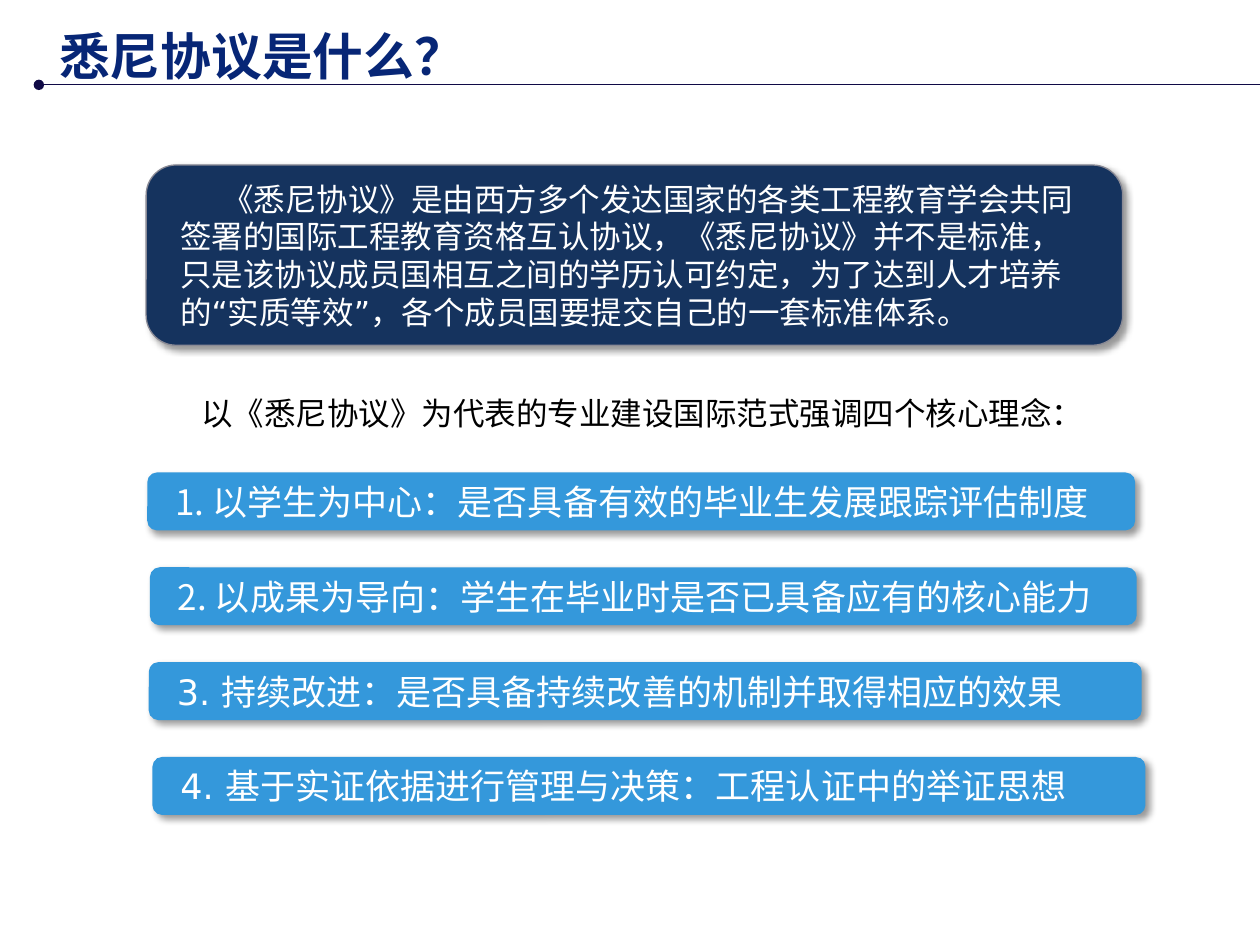
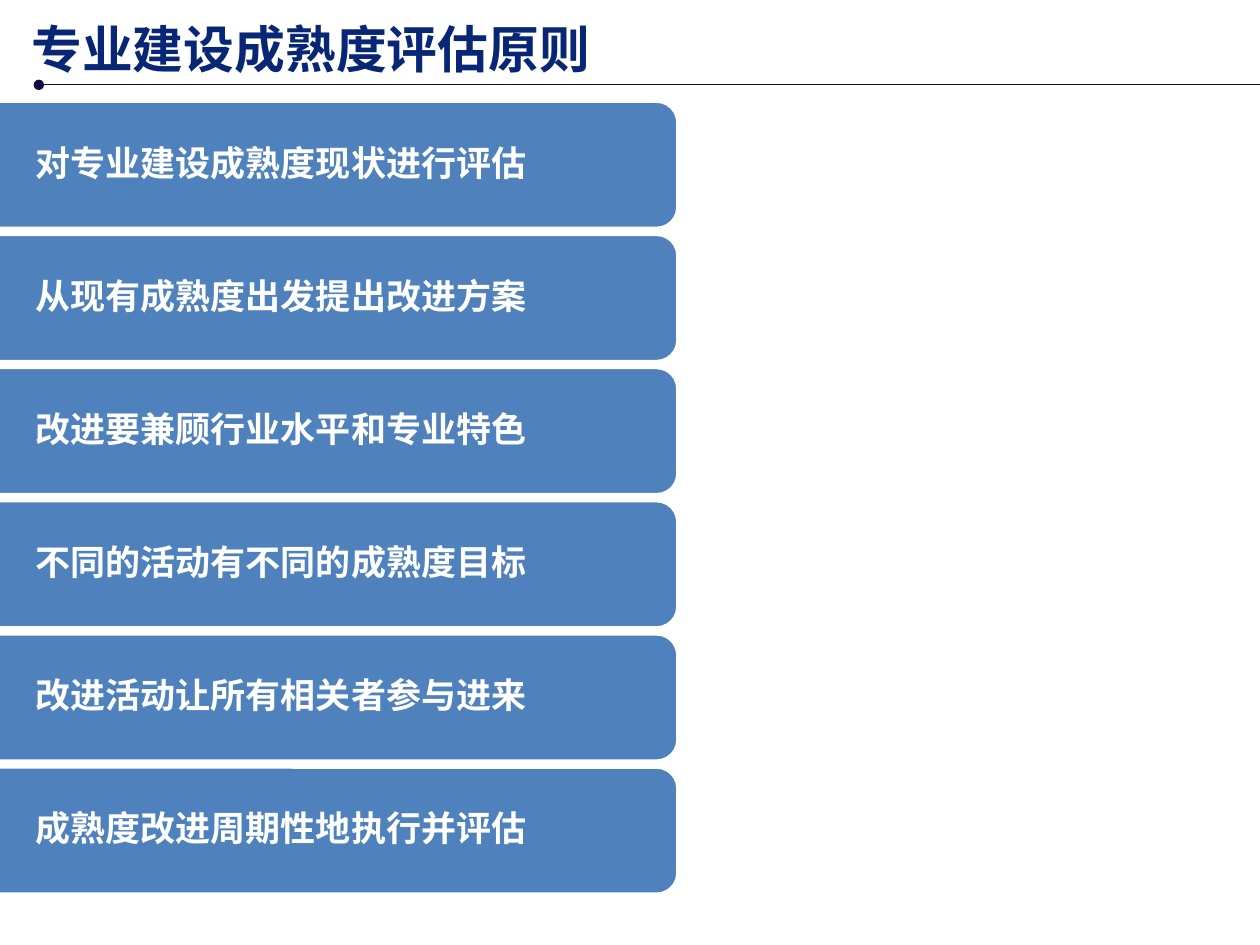
from dataclasses import dataclass

from lxml.etree import SubElement
from pptx import Presentation
from pptx.dml.color import RGBColor
from pptx.enum.shapes import MSO_CONNECTOR as Connector, MSO_SHAPE as Preset
from pptx.enum.text import MSO_ANCHOR as Anchor, PP_ALIGN as Align
from pptx.oxml.ns import qn
from pptx.util import Pt

# Content
AGREEMENT_TITLE = "悉尼协议是什么？"
DEFINITION = (
    "《悉尼协议》是由西方多个发达国家的各类工程教育学会共同签署的国际工程教育资格互认协议，"
    "《悉尼协议》并不是标准，只是该协议成员国相互之间的学历认可约定，为了达到人才培养的“实质等效”，"
    "各个成员国要提交自己的一套标准体系。"
)
IDEAS_LEAD = "以《悉尼协议》为代表的专业建设国际范式强调四个核心理念："
# Each idea: left, width, heading in the title font, rest in the body font
IDEAS = [
    (84.2, 564.5, "1. 以学生为中心：", "是否具备有效的毕业生发展跟踪评估制度"),
    (85.7, 563.8, "2. 以成果为导向：", "学生在毕业时是否已具备应有的核心能力"),
    (85, 567.4, "", "3. 持续改进：是否具备持续改善的机制并取得相应的效果"),
    (87.1, 567.4, "", "4. 基于实证依据进行管理与决策：工程认证中的举证思想"),
]
PRINCIPLES_TITLE = "专业建设成熟度评估原则"
PRINCIPLES = [
    "对专业建设成熟度现状进行评估",
    "从现有成熟度出发提出改进方案",
    "改进要兼顾行业水平和专业特色",
    "不同的活动有不同的成熟度目标",
    "改进活动让所有相关者参与进来",
    "成熟度改进周期性地执行并评估",
]


@dataclass(frozen=True)
class Theme:
    title: str = "072676"
    rule: str = "100A46"
    panel: str = "15335E"
    panel_edge: str = "8A8A95"
    idea: str = "3498DB"
    principle: str = "4F81BD"
    light: str = "FFFFFF"
    dark: str = "000000"
    title_font: str = "Noto Sans CJK SC"
    body_font: str = "DejaVu Sans"
    title_size: int = 29
    item_size: int = 20
    text_size: int = 18


THEME = Theme()


def rgb(code):
    return RGBColor.from_string(code)


def write(shape, runs, size, color, bold=False, insets=(0, 0), indent=0, **layout):
    """Fill a shape with one paragraph of (text, font) runs; layout sets paragraph attributes."""
    across, down = insets
    frame = shape.text_frame
    frame_format = {
        "word_wrap": True, "vertical_anchor": Anchor.MIDDLE,
        "margin_left": Pt(across), "margin_right": Pt(across),
        "margin_top": Pt(down), "margin_bottom": Pt(down),
    }
    for name, value in frame_format.items():
        setattr(frame, name, value)
    paragraph = frame.paragraphs[0]
    if indent:
        paragraph._p.get_or_add_pPr().set("indent", str(Pt(indent)))
    for name, value in {"alignment": Align.LEFT, **layout}.items():
        setattr(paragraph, name, value)
    for text, typeface in runs:
        run = paragraph.add_run()
        run.text = text
        for name, value in {"name": typeface, "size": Pt(size), "bold": bold}.items():
            setattr(run.font, name, value)
        run.font.color.rgb = rgb(color)
        SubElement(run._r.get_or_add_rPr(), qn("a:ea"), typeface=typeface)


def add_box(slide, left, top, width, height):
    return slide.shapes.add_textbox(Pt(left), Pt(top), Pt(width), Pt(height))


def add_card(slide, left, top, width, height, fill, edge=None, edge_width=0, raised=False):
    card = slide.shapes.add_shape(
        Preset.ROUNDED_RECTANGLE, Pt(left), Pt(top), Pt(width), Pt(height))
    card.fill.solid()
    card.fill.fore_color.rgb = rgb(fill)
    if edge:
        card.line.color.rgb = rgb(edge)
        card.line.width = Pt(edge_width)
    else:
        card.line.fill.background()
    card.shadow.inherit = False
    if raised:
        effects = card._element.spPr.find(qn("a:effectLst"))
        shadow = SubElement(effects, qn("a:outerShdw"), blurRad=str(Pt(4)), dist=str(Pt(3)),
                            dir="2700000", algn="tl", rotWithShape="0")
        tint = SubElement(shadow, qn("a:srgbClr"), val=THEME.dark)
        SubElement(tint, qn("a:alpha"), val="40000")
    return card


def add_titled_slide(deck, title, left, top, width):
    slide = deck.slides.add_slide(deck.slide_layouts[6])
    write(add_box(slide, left, top, width, 35.3), [(title, THEME.title_font)],
          THEME.title_size, THEME.title, bold=True)
    rule = slide.shapes.add_connector(Connector.STRAIGHT, Pt(22.2), Pt(48.5), Pt(726.5), Pt(48.5))
    rule.line.color.rgb = rgb(THEME.rule)
    rule.line.width = Pt(0.5)
    SubElement(rule.line._get_or_add_ln(), qn("a:headEnd"), type="oval")
    SubElement(rule._element.spPr, qn("a:effectLst"))
    return slide


def build_agreement(deck):
    slide = add_titled_slide(deck, AGREEMENT_TITLE, 33.8, 13.7, 484)
    card_insets = (14.4, 2.9)
    definition = add_card(slide, 83.5, 94.3, 558, 103, THEME.panel,
                          THEME.panel_edge, 0.75, raised=True)
    write(definition, [(DEFINITION, THEME.body_font)], THEME.text_size, THEME.light,
          insets=card_insets, indent=24, line_spacing=Pt(21.5))
    write(add_box(slide, 95.8, 221.8, 541.4, 28.8), [(IDEAS_LEAD, THEME.body_font)],
          THEME.text_size, THEME.dark, insets=(7.2, 3.6), indent=12)
    first_top, pitch = 270, 54.2
    for row, (left, width, heading, rest) in enumerate(IDEAS):
        idea = add_card(slide, left, first_top + row * pitch, width, 33.1,
                        THEME.idea, raised=True)
        runs = [(heading, THEME.title_font), (rest, THEME.body_font)]
        write(idea, [run for run in runs if run[0]], THEME.item_size, THEME.light,
              insets=card_insets)


def build_principles(deck):
    slide = add_titled_slide(deck, PRINCIPLES_TITLE, 18, 10.1, 559.4)
    first_top, pitch = 57.8, 76.1
    for row, principle in enumerate(PRINCIPLES):
        card = add_card(slide, -66.2, first_top + row * pitch, 453.6, 72.7,
                        THEME.principle, THEME.light, 2)
        write(card, [(principle, THEME.body_font)], THEME.item_size, THEME.light, bold=True,
              insets=(5.8, 2.9), alignment=Align.CENTER, line_spacing=0.9)


def main():
    deck = Presentation()
    deck.slide_width, deck.slide_height = Pt(720), Pt(540)
    build_agreement(deck)
    build_principles(deck)
    deck.save("out.pptx")


if __name__ == "__main__":
    main()
